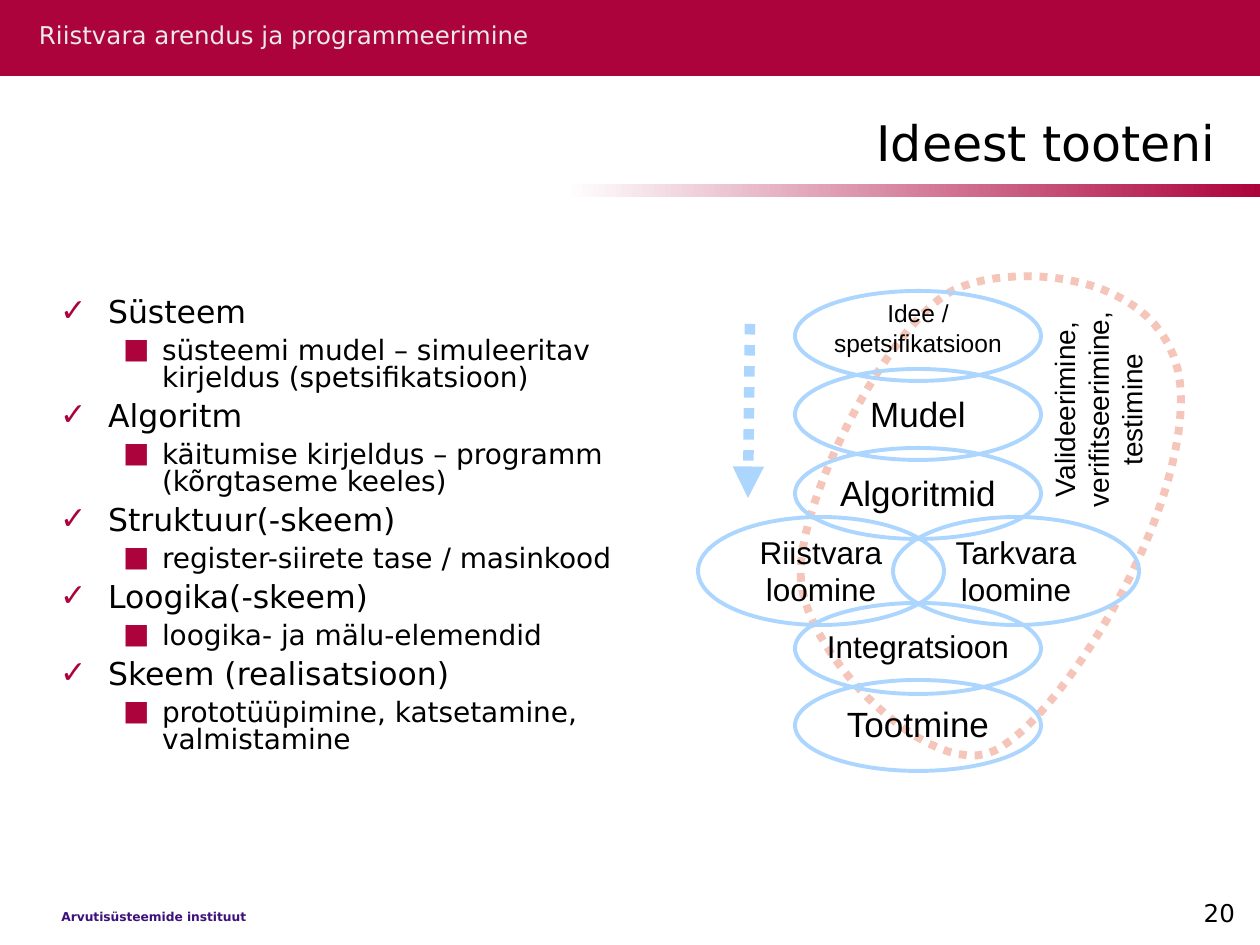
from lxml import etree
from pptx import Presentation
from pptx.dml.color import RGBColor
from pptx.enum.dml import MSO_LINE
from pptx.enum.shapes import MSO_CONNECTOR, MSO_SHAPE
from pptx.enum.text import MSO_ANCHOR, MSO_AUTO_SIZE, PP_ALIGN
from pptx.oxml.ns import qn
from pptx.util import Inches, Pt

DOTS = MSO_LINE.ROUND_DOT
STRAIGHT = MSO_CONNECTOR.STRAIGHT
RECTANGLE, OVAL = MSO_SHAPE.RECTANGLE, MSO_SHAPE.OVAL
TOP, BOTTOM = MSO_ANCHOR.TOP, MSO_ANCHOR.BOTTOM
LEFT, CENTER, RIGHT = PP_ALIGN.LEFT, PP_ALIGN.CENTER, PP_ALIGN.RIGHT
NO_FIT = MSO_AUTO_SIZE.NONE

PX = Inches(1) / 126
SANS, ARIAL = "DejaVu Sans", "Arial"
COLORS = {"crimson": "AC033C", "white": "FFFFFF", "black": "000000", "pale": "EAEAEA",
          "violet": "3D117B", "sky": "ADD6FF", "salmon": "F4C5B8"}

COURSE = "Riistvara arendus ja programmeerimine"
INSTITUTE = "Arvutisüsteemide instituut"
TITLE = "Ideest tooteni"
PAGE = "20"
TOPICS = [
    ("Süsteem", "süsteemi mudel – simuleeritav kirjeldus (spetsifikatsioon)"),
    ("Algoritm", "käitumise kirjeldus – programm (kõrgtaseme keeles)"),
    ("Struktuur(-skeem)", "register-siirete tase / masinkood"),
    ("Loogika(-skeem)", "loogika- ja mälu-elemendid"),
    ("Skeem (realisatsioon)", "prototüüpimine, katsetamine, valmistamine"),
]
LEVELS = [
    {"size": 18, "bullet": "✓", "margin": 48, "hanging": 48},
    {"size": 16, "bullet": "■", "margin": 102, "hanging": 39},
]

# label, font size, centre x, oval top, oval height, label rise, label width, label height
STAGES = [
    ("Idee /\vspetsifikatsioon", 14, 918, 291, 90, 8, 194, 72),
    ("Mudel", 20, 918, 369, 91, 1, 122, 55),
    ("Algoritmid", 20, 918, 448, 91, 1, 183, 55),
    ("Riistvara\vloomine", 18, 821, 517, 108, 0, 149, 89),
    ("Tarkvara\vloomine", 18, 1016, 517, 108, 0, 148, 89),
    ("Integratsioon", 18, 918, 603, 91, 3, 209, 50),
    ("Tootmine", 20, 918, 680, 91, 2, 169, 55),
]
OVAL_WIDTH = 246
CHECKS = "Valideerimine,\vverifitseerimine,\vtestimine"
LOOP_START = (801, 581)
LOOP_CURVES = [
    ((794, 504), (891, 320), (954, 290)),
    ((1017, 260), (1181, 272), (1181, 399)),
    ((1181, 527), (1058, 721), (994, 751)),
    ((931, 781), (808, 658), (801, 581)),
]
CURVE_STEPS = 24


def px(value):
    return round(value * PX)


def color(name):
    return RGBColor.from_string(COLORS[name])


def apply(target, values):
    for name, value in values.items():
        setattr(target, name, value)


def place(part, left, top, width, height):
    apply(part, {"left": px(left), "top": px(top), "width": px(width), "height": px(height)})


def style_font(font, size, face, tint, bold=False):
    apply(font, {"size": Pt(size), "name": face, "bold": bold})
    font.color.rgb = color(tint)


def style_line(line, tint, width, dash=None):
    line.color.rgb = color(tint)
    line.width = Pt(width)
    if dash:
        line.dash_style = dash


def write(part, text, size, face, tint="black", align=LEFT, bold=False, **frame_values):
    frame = part.text_frame
    frame.text = text
    apply(frame, {"auto_size": NO_FIT, **frame_values})
    frame.paragraphs[0].alignment = align
    style_font(frame.paragraphs[0].font, size, face, tint, bold)


def add_label(box, *args, **values):
    label = slide.shapes.add_textbox(*map(px, box))
    write(label, *args, **{"word_wrap": False, **values})
    return label


def add_band(*box):
    band = slide.shapes.add_shape(RECTANGLE, *map(px, box))
    band.shadow.inherit = False
    band.line.fill.background()
    return band


def add_bullet(paragraph, level):
    properties = paragraph._p.get_or_add_pPr()
    properties.set("marL", str(px(level["margin"])))
    properties.set("indent", str(-px(level["hanging"])))
    tint = etree.SubElement(properties, qn("a:buClr"))
    etree.SubElement(tint, qn("a:srgbClr"), val=COLORS["crimson"])
    etree.SubElement(properties, qn("a:buFont"), typeface=SANS)
    etree.SubElement(properties, qn("a:buChar"), char=level["bullet"])


def curve_points(start, curves):
    for first, second, end in curves:
        for step in range(1, CURVE_STEPS + 1):
            t = step / CURVE_STEPS
            weights = ((1 - t) ** 3, 3 * t * (1 - t) ** 2, 3 * t * t * (1 - t), t ** 3)
            yield tuple(px(sum(w * point[axis] for w, point in
                               zip(weights, (start, first, second, end)))) for axis in (0, 1))
        start = end


prs = Presentation()
apply(prs, {"slide_width": px(1260), "slide_height": px(945)})
slide = prs.slides.add_slide(prs.slide_layouts[1])
no_insets = dict.fromkeys(("margin_left", "margin_top", "margin_right", "margin_bottom"), 0)

add_band(0, 0, 1260, 76).fill.solid()
header = slide.shapes[-1]
header.fill.fore_color.rgb = color("crimson")
rule_fill = add_band(566, 184, 694, 13).fill
rule_fill.gradient()
rule_fill.gradient_angle = 0
for stop, tint in zip(rule_fill.gradient_stops, ("white", "crimson")):
    stop.color.rgb = color(tint)

add_label((39, 20, 494, 30), COURSE, 14, SANS, "pale", **no_insets)
add_label((49, 903, 210, 28), INSTITUTE, 7, SANS, "violet", bold=True)
add_label((973, 908, 262, 30), PAGE, 14, SANS, align=RIGHT, vertical_anchor=BOTTOM,
          word_wrap=True, **{**no_insets, "margin_top": px(11), "margin_bottom": px(11)})

title = slide.shapes.title
place(title, 15, 106, 1213, 72)
write(title, TITLE, 28, SANS, align=RIGHT, vertical_anchor=BOTTOM)

topics = slide.placeholders[1]
place(topics, 60, 299, 580, 467)
apply(topics.text_frame, {**no_insets, "auto_size": NO_FIT, "vertical_anchor": TOP})
lines = [(depth, text) for topic in TOPICS for depth, text in enumerate(topic)]
for number, (depth, text) in enumerate(lines):
    frame = topics.text_frame
    paragraph = frame.add_paragraph() if number else frame.paragraphs[0]
    add_bullet(paragraph, LEVELS[depth])
    paragraph.text = text
    apply(paragraph, {"level": depth, "alignment": LEFT, "line_spacing": 0.8,
                      "space_before": Pt(4 if number else 0), "space_after": Pt(1.7)})
    style_font(paragraph.font, LEVELS[depth]["size"], SANS, "black")

outline = slide.shapes.build_freeform(*map(px, LOOP_START))
outline.add_line_segments(list(curve_points(LOOP_START, LOOP_CURVES)), close=True)
loop = outline.convert_to_shape()
loop.shadow.inherit = False
loop.fill.background()
style_line(loop.line, "salmon", 4.5, DOTS)

arrow = slide.shapes.add_connector(STRAIGHT, *map(px, (750, 324, 748, 498)))
style_line(arrow.line, "sky", 6, DOTS)
etree.SubElement(arrow.line._get_or_add_ln(), qn("a:tailEnd"), type="triangle")
etree.SubElement(arrow._element.spPr, qn("a:effectLst"))

for text, size, center, top, height, rise, width, label_height in STAGES:
    middle = top + height / 2 - rise
    add_label((center - width / 2, middle - label_height / 2, width, label_height),
              text, size, ARIAL, align=CENTER)
    oval = slide.shapes.add_shape(
        OVAL, *map(px, (center - OVAL_WIDTH / 2, top, OVAL_WIDTH, height)))
    oval.shadow.inherit = False
    oval.fill.background()
    style_line(oval.line, "sky", 2.25)

checks = add_label((987, 352, 223, 115), CHECKS, 16, ARIAL, align=CENTER)
checks.rotation = 270

prs.save("out.pptx")
